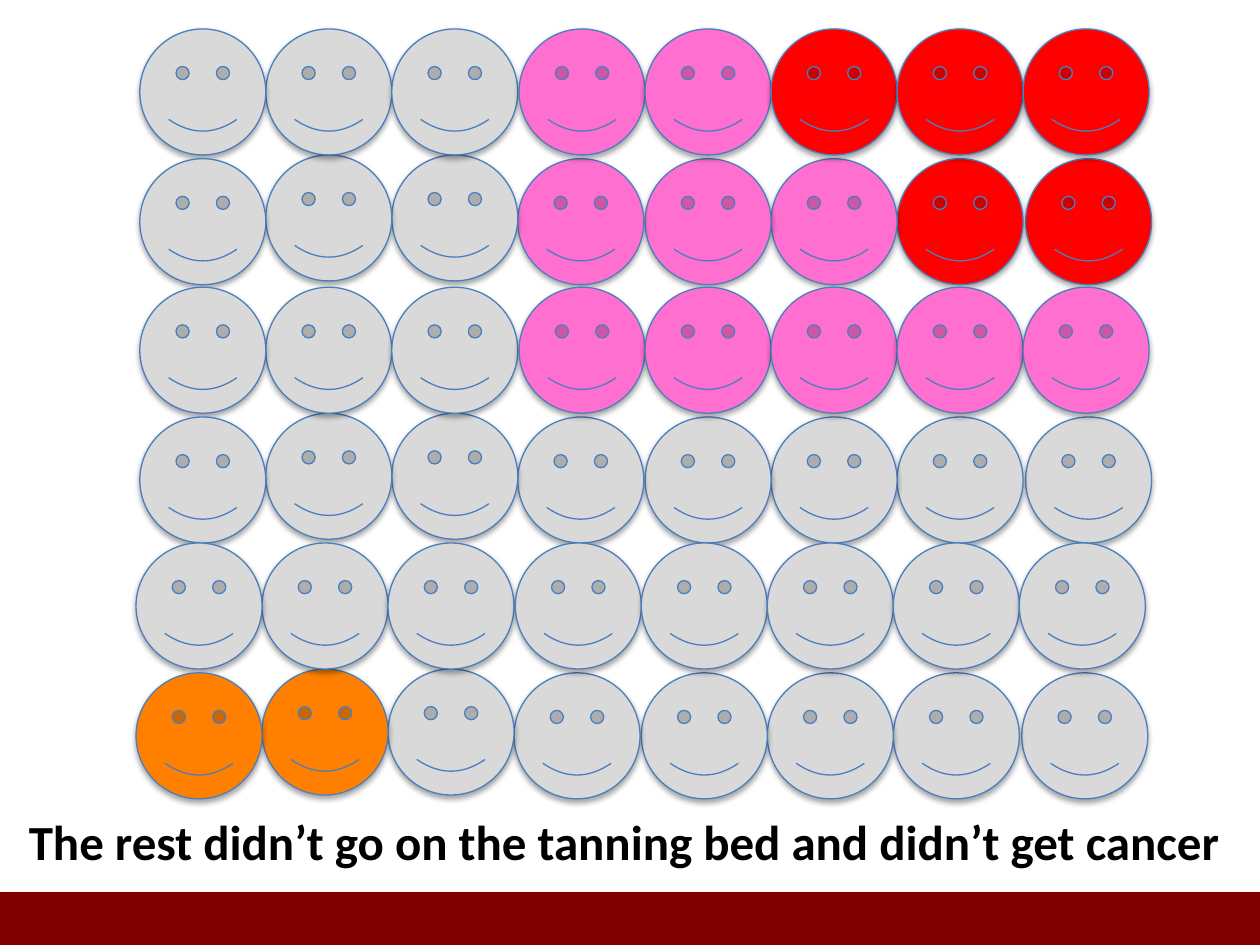
from dataclasses import dataclass

from lxml.etree import SubElement
from pptx import Presentation
from pptx.dml.color import RGBColor
from pptx.enum.shapes import MSO_SHAPE
from pptx.enum.text import MSO_AUTO_SIZE
from pptx.oxml.ns import qn
from pptx.util import Pt

# Content: one letter per face
CAPTION = "The rest didn’t go on the tanning bed and didn’t get cancer"
FACES = [
    "NNNPPRRR",
    "NNNPPPRR",
    "NNNPPPPP",
    "NNNNNNNN",
    "NNNNNNNN",
    "OONNNNNN",
]


@dataclass(frozen=True)
class Theme:
    neutral: str = "D9D9D9"
    pink: str = "FF6FCF"
    red: str = "FF0000"
    orange: str = "FF8000"
    outline: str = "4B7EBC"
    band: str = "800000"
    text: str = "000000"
    font: str = "Calibri"
    caption_size: int = 28
    line_width: float = 0.75


THEME = Theme()
FILLS = {"N": THEME.neutral, "P": THEME.pink, "R": THEME.red, "O": THEME.orange}

# Geometry in px, 100 px to the inch
EMU_PER_PX = 9144
SLIDE_W, SLIDE_H = 1000, 750
FACE = 100
BLOCKS = [(111, 23), (111, 228), (108, 431)]  # left, top of each pair of rows
UPPER_X = [0, 100, 200, 301, 401, 501, 601, 701]
LOWER_X = [0, 100, 200, 300, 401, 501, 601, 703]
LOWER_Y = [103, 100, 100, 103, 103, 103, 103, 103]
# Stacking within a block, back to front: (row, column)
STACK = ([(1, col) for col in range(7, 0, -1)]
         + [(0, col) for col in (1, 0, 2, 3, 4, 5, 6, 7)] + [(1, 0)])


def px(*values):
    return [value * EMU_PER_PX for value in values]


def add_shadow(sp):
    sp.shadow.inherit = False
    effects = sp._element.spPr.find(qn("a:effectLst"))
    shadow = SubElement(effects, qn("a:outerShdw"), blurRad="40000",
                        dist="23000", dir="5400000", rotWithShape="0")
    color = SubElement(shadow, qn("a:srgbClr"), val="000000")
    SubElement(color, qn("a:alpha"), val="35000")


def add_filled(shapes, kind, box, fill, line=None):
    sp = shapes.add_shape(kind, *px(*box))
    sp.fill.solid()
    sp.fill.fore_color.rgb = RGBColor.from_string(fill)
    if line:
        sp.line.color.rgb = RGBColor.from_string(line)
        sp.line.width = Pt(THEME.line_width)
    else:
        sp.line.fill.background()
    add_shadow(sp)
    return sp


def add_text(s, text, box, *, size, color, bold=False):
    sp = s.shapes.add_textbox(*px(*box))
    tf = sp.text_frame
    tf.word_wrap = False
    tf.auto_size = MSO_AUTO_SIZE.SHAPE_TO_FIT_TEXT
    r = tf.paragraphs[0].add_run()
    r.text = text
    r.font.name = THEME.font
    r.font.size = Pt(size)
    r.font.bold = bold
    r.font.color.rgb = RGBColor.from_string(color)
    return sp


def add_block(s, left, top, rows):
    group = s.shapes.add_group_shape()
    for row, col in STACK:
        x = left + (LOWER_X if row else UPPER_X)[col]
        y = top + (LOWER_Y[col] if row else 0)
        add_filled(group.shapes, MSO_SHAPE.SMILEY_FACE, (x, y, FACE, FACE),
                   FILLS[rows[row][col]], THEME.outline)


def main():
    prs = Presentation()
    prs.slide_width, prs.slide_height = px(SLIDE_W, SLIDE_H)
    s = prs.slides.add_slide(prs.slide_layouts[6])

    # Bottom band
    add_filled(s.shapes, MSO_SHAPE.RECTANGLE, (0, 708, SLIDE_W, 42), THEME.band)

    # Faces, two rows to a group
    for i, (left, top) in enumerate(BLOCKS):
        add_block(s, left, top, FACES[2 * i:2 * i + 2])

    # Caption
    add_text(s, CAPTION, (13, 639, 978, 57),
             size=THEME.caption_size, color=THEME.text, bold=True)

    prs.save("out.pptx")


if __name__ == "__main__":
    main()
